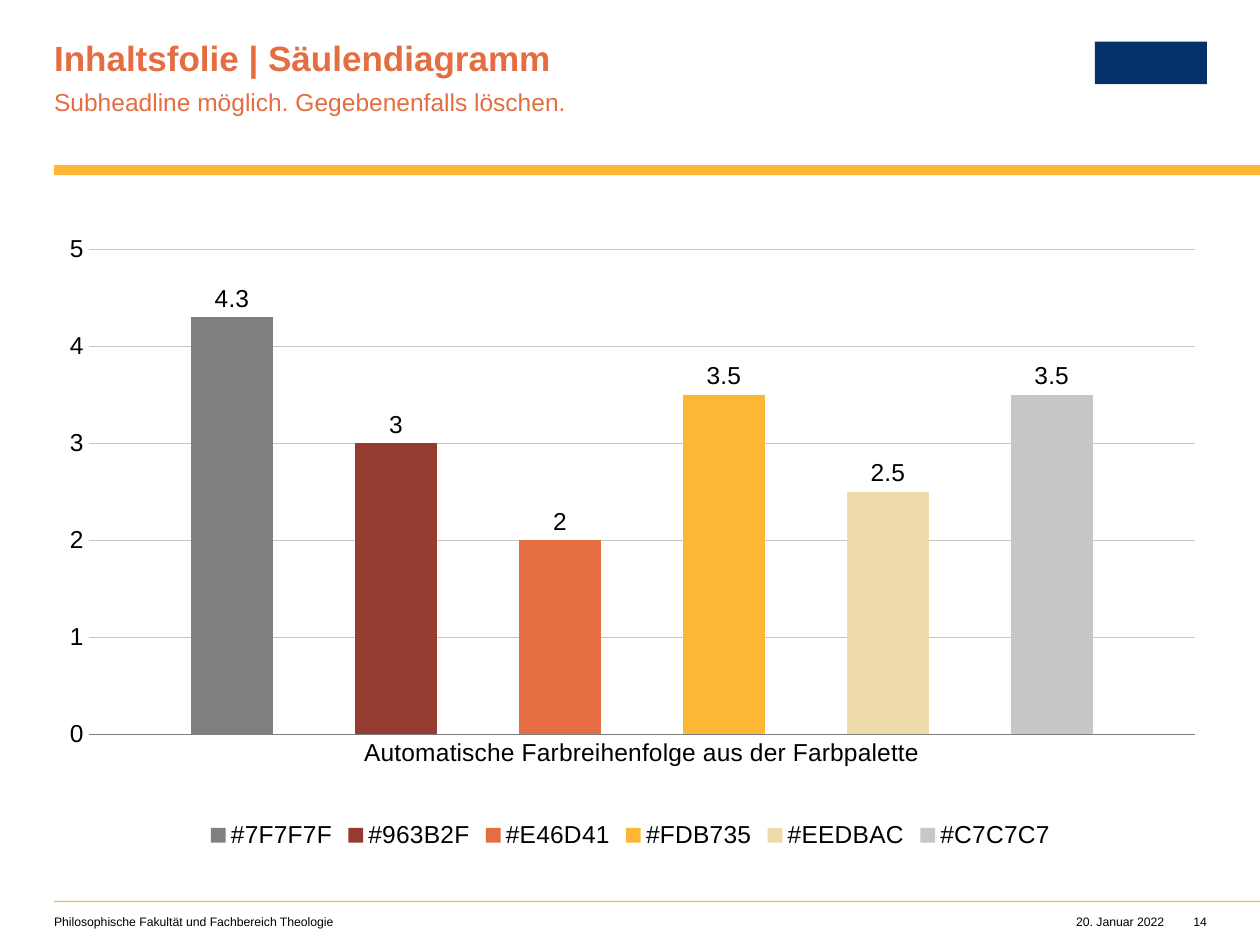
from dataclasses import dataclass

from lxml import etree
from pptx import Presentation
from pptx import util as u
from pptx.chart import data as chart_data
from pptx.dml.color import RGBColor
from pptx.enum import chart as ch
from pptx.enum import shapes, text
from pptx.oxml import ns

FONT = "Arial"
BLACK, GRAY, LIGHT_GRAY = "000000", "7F7F7F", "C7C7C7"
ORANGE, YELLOW, NAVY = "E46D41", "FDB735", "04316A"
LEFT, RIGHT, PAGE_WIDTH = 1.09, 24.33, 25.4
FOOTER_TOP = 18.44


@dataclass
class Area:
    left: float
    top: float
    width: float
    height: float

    def lengths(self) -> tuple:
        return tuple(u.Cm(v) for v in (self.left, self.top, self.width, self.height))


@dataclass
class Block:
    area: Area
    color: str


@dataclass
class FooterItem:
    wording: str
    left: float
    right: float
    align: text.PP_ALIGN


@dataclass
class Column:
    color: str
    value: float


BLOCKS = [
    Block(Area(LEFT, 3.33, PAGE_WIDTH - LEFT, 0.2), YELLOW),
    Block(Area(LEFT, 18.16, PAGE_WIDTH - LEFT, 0.03), YELLOW),
    Block(Area(22.07, 0.84, 2.26, 0.86), NAVY),
]
FOOTER = [
    FooterItem("Philosophische Fakultät und Fachbereich Theologie", LEFT, 12.49, text.PP_ALIGN.LEFT),
    FooterItem("20. Januar 2022", 21.67, 23.47, text.PP_ALIGN.RIGHT),
    FooterItem("14", 23.83, RIGHT, text.PP_ALIGN.RIGHT),
]
COLUMNS = [
    Column(GRAY, 4.3),
    Column("963B2F", 3),
    Column(ORANGE, 2),
    Column(YELLOW, 3.5),
    Column("EEDBAC", 2.5),
    Column(LIGHT_GRAY, 3.5),
]


def rgb(color: str) -> RGBColor:
    return RGBColor.from_string(color)


def set_font(font, size: float, color: str, bold: bool = False) -> None:
    font.name = FONT
    font.size = u.Pt(size)
    font.bold = bold
    font.color.rgb = rgb(color)


def write(box, wording: str, size: float, color: str, bold: bool = False):
    """Fill a text shape with one line, without margins, and return its paragraph."""
    frame = box.text_frame
    frame.text = wording
    frame.word_wrap = True
    frame.auto_size = text.MSO_AUTO_SIZE.NONE
    frame.vertical_anchor = text.MSO_ANCHOR.TOP
    frame.margin_left = frame.margin_top = frame.margin_right = frame.margin_bottom = 0
    para = frame.paragraphs[0]
    for span in para.runs:
        set_font(span.font, size, color, bold)
    return para


def place(box, area: Area) -> None:
    box.left, box.top, box.width, box.height = area.lengths()


def add_block(page, block: Block) -> None:
    box = page.shapes.add_shape(shapes.MSO_SHAPE.RECTANGLE, *block.area.lengths())
    box.shadow.inherit = False
    box.fill.solid()
    box.fill.fore_color.rgb = rgb(block.color)
    box.line.fill.background()


def add_footer_item(page, item: FooterItem) -> None:
    area = Area(item.left, FOOTER_TOP, item.right - item.left, 0.3)
    box = page.shapes.add_textbox(*area.lengths())
    write(box, item.wording, 7, BLACK).alignment = item.align


def add_headings(page) -> None:
    title, body = page.shapes.title, page.placeholders[1]
    place(title, Area(LEFT, 0.84, 14.25, 0.76))
    para = write(title, "Inhaltsfolie | Säulendiagramm", 20, ORANGE, bold=True)
    para.alignment = text.PP_ALIGN.LEFT
    para.line_spacing = 0.9

    place(body, Area(LEFT, 1.7, 14.25, 0.61))
    para = write(body, "Subheadline möglich. Gegebenenfalls löschen.", 14, ORANGE)
    para.line_spacing = 1.1
    para.space_before, para.space_after = u.Pt(0), u.Pt(8)
    properties = para._p.get_or_add_pPr()
    properties.set("marL", "0")
    properties.set("indent", "0")
    etree.SubElement(properties, ns.qn("a:buNone"))


def set_plot_layout(chart, **fractions: float) -> None:
    """Fix the inner plot area as fractions of the chart."""
    plot_area = chart._chartSpace.chart.plotArea
    for old in plot_area.findall(ns.qn("c:layout")):
        plot_area.remove(old)
    layout = etree.Element(ns.qn("c:layout"))
    manual = etree.SubElement(layout, ns.qn("c:manualLayout"))
    settings = {"layoutTarget": "inner", "xMode": "edge", "yMode": "edge", **fractions}
    for name, value in settings.items():
        etree.SubElement(manual, ns.qn(f"c:{name}")).set("val", str(value))
    plot_area.insert(0, layout)


def add_column_chart(page) -> None:
    data = chart_data.CategoryChartData()
    data.categories = ["Automatische Farbreihenfolge aus der Farbpalette"]
    for column in COLUMNS:
        data.add_series(f"#{column.color}", [column.value])
    area = Area(LEFT, 4.52, RIGHT - LEFT, 12.7)
    chart = page.shapes.add_chart(ch.XL_CHART_TYPE.COLUMN_CLUSTERED, *area.lengths(), data).chart
    set_font(chart.font, 14, BLACK)
    chart.has_title = False
    set_plot_layout(chart, x=0.03, y=0.04, w=0.96, h=0.77)

    chart.has_legend = True
    chart.legend.position = ch.XL_LEGEND_POSITION.BOTTOM
    chart.legend.include_in_layout = False
    set_font(chart.legend.font, 14, BLACK)

    for axis in (chart.category_axis, chart.value_axis):
        axis.major_tick_mark = axis.minor_tick_mark = ch.XL_TICK_MARK.NONE
        set_font(axis.tick_labels.font, 14, BLACK)
    chart.category_axis.format.line.color.rgb = rgb(GRAY)
    chart.category_axis.format.line.width = u.Pt(0.5)
    values = chart.value_axis
    values.minimum_scale, values.maximum_scale, values.major_unit = 0, 5, 1
    values.format.line.fill.background()
    values.major_gridlines.format.line.color.rgb = rgb(LIGHT_GRAY)
    values.major_gridlines.format.line.width = u.Pt(0.5)

    plot = chart.plots[0]
    plot.gap_width, plot.overlap = 250, -100
    plot.vary_by_categories = False
    for series, column in zip(plot.series, COLUMNS):
        series.format.fill.solid()
        series.format.fill.fore_color.rgb = rgb(column.color)
        labels = series.data_labels
        labels.show_value = True
        labels.position = ch.XL_LABEL_POSITION.OUTSIDE_END
        set_font(labels.font, 14, BLACK)


def main() -> None:
    deck = Presentation()
    deck.slide_width, deck.slide_height = u.Cm(PAGE_WIDTH), u.Cm(19.05)
    page = deck.slides.add_slide(deck.slide_layouts[1])
    for block in BLOCKS:
        add_block(page, block)
    for item in FOOTER:
        add_footer_item(page, item)
    add_headings(page)
    add_column_chart(page)
    deck.save("out.pptx")


if __name__ == "__main__":
    main()
